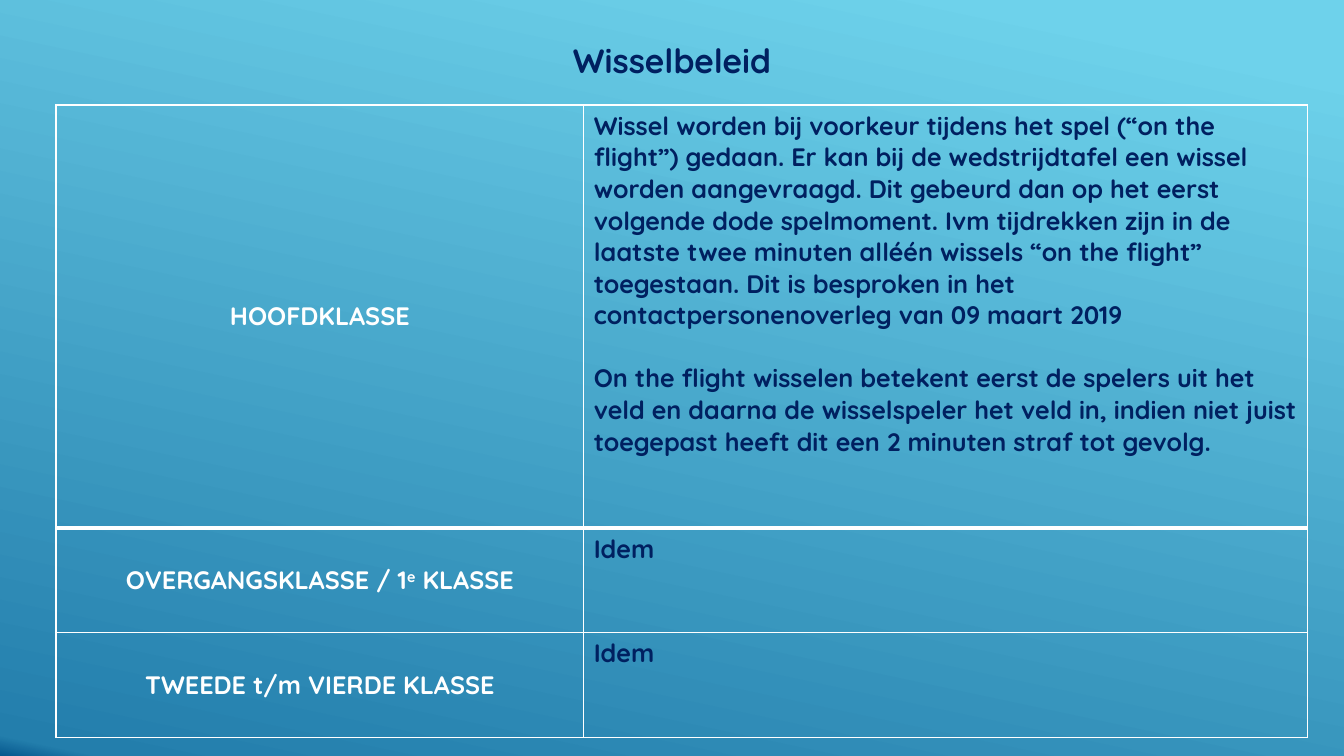
import lxml.etree
import pptx
import pptx.dml.color
import pptx.enum.text
import pptx.oxml.ns
import pptx.util

Pt = pptx.util.Pt
RGBColor = pptx.dml.color.RGBColor
Align = pptx.enum.text.PP_ALIGN
Anchor = pptx.enum.text.MSO_ANCHOR
qn = pptx.oxml.ns.qn

WHITE = RGBColor(0xFF, 0xFF, 0xFF)
NAVY = RGBColor(0x00, 0x20, 0x60)
SKY = RGBColor(0x6E, 0xD2, 0xEB)
BLUE = RGBColor(0x23, 0x7E, 0xAC)
DEEP_BLUE = RGBColor(0x06, 0x58, 0x8E)

HOOFDKLASSE_RULES = [
    "Wissel worden bij voorkeur tijdens het spel (“on the flight”) gedaan. "
    "Er kan bij de wedstrijdtafel een wissel worden aangevraagd. Dit gebeurd "
    "dan op het eerst volgende dode spelmoment. Ivm tijdrekken zijn in de "
    "laatste twee minuten alléén wissels “on the flight” toegestaan. Dit is "
    "besproken in het contactpersonenoverleg van 09 maart 2019",
    "On the flight wisselen betekent eerst de spelers uit het veld en daarna "
    "de wisselspeler het veld in, indien niet juist toegepast heeft dit een "
    "2 minuten straf tot gevolg.",
]
POLICY = [
    (["HOOFDKLASSE"], HOOFDKLASSE_RULES),
    (["OVERGANGSKLASSE / 1", "e", " KLASSE"], ["Idem"]),
    (["TWEEDE t/m VIERDE KLASSE"], ["Idem"]),
]


class SlideBuilder:
    font_name = "Quicksand"
    body_size = 18
    title_size = 24

    def __init__(self, page):
        self.page = page

    def background(self, stops, angle):
        fill = self.page.background.fill
        fill.gradient()
        fill.gradient_angle = 360 - angle
        stop_list = next(self.page._element.iter(qn("a:gsLst")))
        for stop in list(stop_list):
            stop_list.remove(stop)
        for percent, color in stops:
            stop = lxml.etree.SubElement(stop_list, qn("a:gs"), pos=str(percent * 1000))
            lxml.etree.SubElement(stop, qn("a:srgbClr"), val=str(color))

    def style(self, para, size, color, align):
        para.alignment = align
        para.font.name = self.font_name
        para.font.size = Pt(size)
        para.font.bold = True
        para.font.color.rgb = color

    def title(self, text, left, top, width, height):
        box = self.page.shapes.add_textbox(Pt(left), Pt(top), Pt(width), Pt(height))
        box.text_frame.word_wrap = True
        box.text_frame.auto_size = pptx.enum.text.MSO_AUTO_SIZE.SHAPE_TO_FIT_TEXT
        para = box.text_frame.paragraphs[0]
        para.text = text
        self.style(para, self.title_size, NAVY, Align.CENTER)

    def borders(self, cell, top, bottom):
        properties = cell._tc.get_or_add_tcPr()
        for side, width in (("L", 1), ("R", 1), ("T", top), ("B", bottom)):
            line = lxml.etree.SubElement(properties, qn(f"a:ln{side}"), w=str(Pt(width)))
            fill = lxml.etree.SubElement(line, qn("a:solidFill"))
            lxml.etree.SubElement(fill, qn("a:srgbClr"), val=str(WHITE))

    def class_name(self, cell, parts):
        cell.vertical_anchor = Anchor.MIDDLE
        para = cell.text_frame.paragraphs[0]
        for index, part in enumerate(parts):
            span = para.add_run()
            span.text = part
            if index == 1:
                span._r.get_or_add_rPr().set("baseline", "30000")
        self.style(para, self.body_size, WHITE, Align.CENTER)

    def rules(self, cell, texts):
        frame = cell.text_frame
        for index, text in enumerate(texts):
            para = frame.add_paragraph() if index else frame.paragraphs[0]
            para.text = text
            self.style(para, self.body_size, NAVY, Align.LEFT)
            if index:
                para.space_before = Pt(self.body_size * 1.25)

    def policy_table(self, policy, left, top, widths, heights):
        table = self.page.shapes.add_table(
            len(heights), len(widths), Pt(left), Pt(top), Pt(sum(widths)), Pt(sum(heights))
        ).table
        table.first_row = False
        table.horz_banding = False
        for column, width in zip(table.columns, widths):
            column.width = Pt(width)
        for row, height in zip(table.rows, heights):
            row.height = Pt(height)
        for index, (name_parts, texts) in enumerate(policy):
            name_cell, rules_cell = table.rows[index].cells
            for cell in (name_cell, rules_cell):
                self.borders(cell, 3 if index == 1 else 1, 3 if index == 0 else 1)
                cell.fill.background()
            self.class_name(name_cell, name_parts)
            self.rules(rules_cell, texts)


def main():
    deck = pptx.Presentation()
    deck.slide_width = Pt(960)
    deck.slide_height = Pt(540)
    builder = SlideBuilder(deck.slides.add_slide(deck.slide_layouts[6]))
    builder.background([(7, SKY), (98, BLUE), (100, DEEP_BLUE)], 102)
    builder.policy_table(POLICY, 40, 75, [377, 517], [302, 75, 75])
    builder.title("Wisselbeleid", 302, 25, 356, 36)
    deck.save("out.pptx")


if __name__ == "__main__":
    main()
